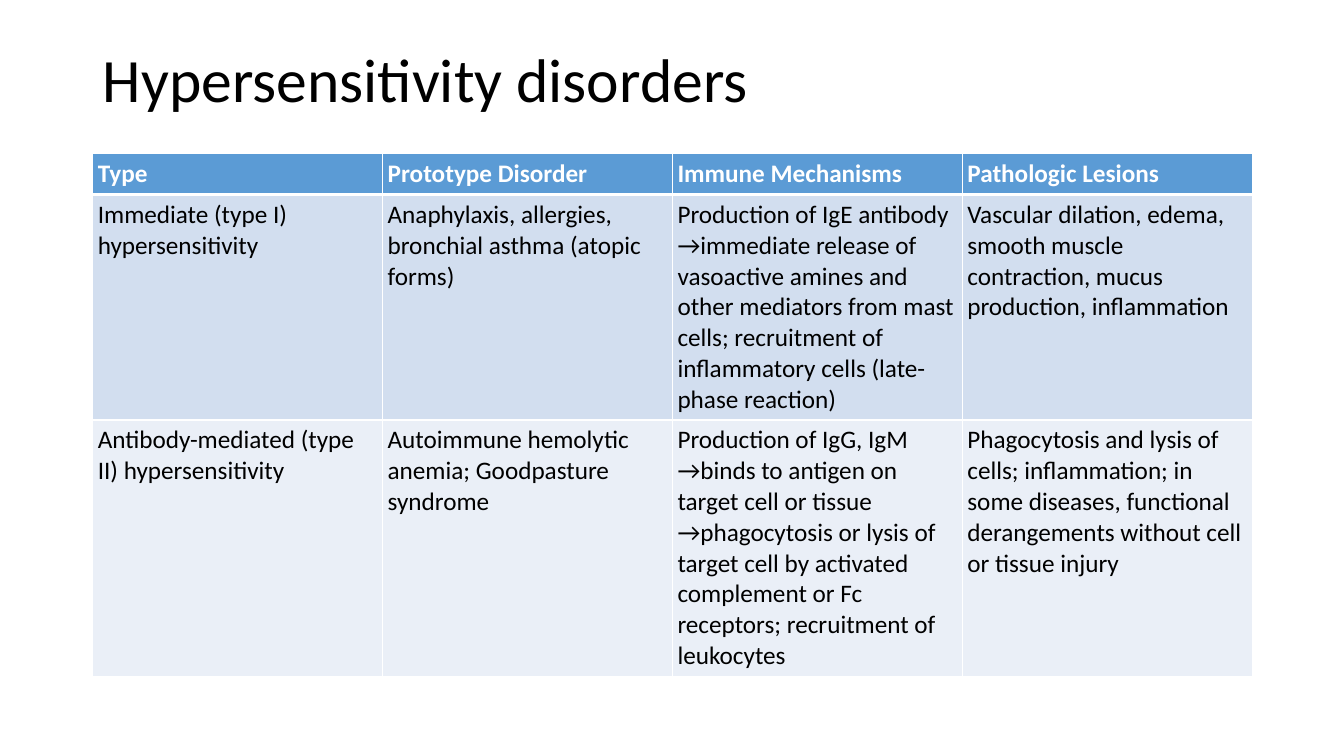
from lxml import etree
from pptx import Presentation
from pptx.dml.color import RGBColor
from pptx.enum.text import MSO_ANCHOR, MSO_AUTO_SIZE, PP_ALIGN
from pptx.oxml.ns import qn
from pptx.util import Inches, Pt

# Content
TITLE = "Hypersensitivity disorders"
ROWS = [
    ("Type", "Prototype Disorder", "Immune Mechanisms", "Pathologic Lesions"),
    (
        "Immediate (type I) hypersensitivity",
        "Anaphylaxis, allergies, bronchial asthma (atopic forms)",
        "Production of IgE antibody →immediate release of vasoactive amines and "
        "other mediators from mast cells; recruitment of inflammatory cells "
        "(late-phase reaction)",
        "Vascular dilation, edema, smooth muscle contraction, mucus production, "
        "inflammation",
    ),
    (
        "Antibody-mediated (type II) hypersensitivity",
        "Autoimmune hemolytic anemia; Goodpasture syndrome",
        "Production of IgG, IgM →binds to antigen on target cell or tissue "
        "→phagocytosis or lysis of target cell by activated complement or Fc "
        "receptors; recruitment of leukocytes",
        "Phagocytosis and lysis of cells; inflammation; in some diseases, "
        "functional derangements without cell or tissue injury",
    ),
]

# Style
FONT = "Calibri"
BLACK = RGBColor(0x00, 0x00, 0x00)
WHITE = RGBColor(0xFF, 0xFF, 0xFF)
ROW_FILLS = [
    RGBColor(0x5B, 0x9B, 0xD5),
    RGBColor(0xD2, 0xDE, 0xEF),
    RGBColor(0xEA, 0xEF, 0xF7),
]
TOP, MIDDLE, BOTTOM = MSO_ANCHOR.TOP, MSO_ANCHOR.MIDDLE, MSO_ANCHOR.BOTTOM
NO_AUTOFIT = MSO_AUTO_SIZE.NONE
LEFT_ALIGN = PP_ALIGN.LEFT

# Layout, in inches
LEFT, WIDTH = 0.92, 11.5
TITLE_TOP, TITLE_HEIGHT = 0.4, 0.84
TABLE_TOP = 1.52
ROW_HEIGHTS = [0.41, 2.23, 2.53]
CELL_MARGIN = 0.05
TITLE_ONLY = 5


def format_text(paragraph, size, color, bold=False):
    paragraph.alignment = LEFT_ALIGN
    for span in paragraph.runs:
        span.font.name = FONT
        span.font.size = Pt(size)
        span.font.bold = bold
        span.font.color.rgb = color


def add_borders(cell, widths):
    properties = cell._tc.get_or_add_tcPr()
    for side, width in widths.items():
        line = etree.SubElement(properties, qn(f"a:ln{side}"), w=str(Pt(width)))
        fill = etree.SubElement(line, qn("a:solidFill"))
        etree.SubElement(fill, qn("a:srgbClr"), val=str(WHITE))


def fill_cell(cell, text, row):
    header = row == 0
    add_borders(cell, {"L": 1, "R": 1, "T": 3 if row == 1 else 1, "B": 3 if header else 1})
    cell.fill.solid()
    cell.fill.fore_color.rgb = ROW_FILLS[row]
    cell.margin_left = cell.margin_right = Inches(CELL_MARGIN)
    cell.margin_top = cell.margin_bottom = Inches(CELL_MARGIN)
    cell.vertical_anchor = BOTTOM if header else TOP
    cell.text_frame.text = text
    format_text(cell.text_frame.paragraphs[0], 18, WHITE if header else BLACK, header)


def main():
    deck = Presentation()
    deck.slide_width, deck.slide_height = Inches(13.33), Inches(7.5)
    page = deck.slides.add_slide(deck.slide_layouts[TITLE_ONLY])

    # Title
    title = page.shapes.title
    title.left, title.top = Inches(LEFT), Inches(TITLE_TOP)
    title.width, title.height = Inches(WIDTH), Inches(TITLE_HEIGHT)
    frame = title.text_frame
    frame.text = TITLE
    frame.auto_size = NO_AUTOFIT
    frame.vertical_anchor = MIDDLE
    frame.paragraphs[0].line_spacing = 0.9
    format_text(frame.paragraphs[0], 44, BLACK)

    # Table
    table = page.shapes.add_table(
        len(ROWS), len(ROWS[0]), Inches(LEFT), Inches(TABLE_TOP),
        Inches(WIDTH), Inches(sum(ROW_HEIGHTS)),
    ).table
    for column in table.columns:
        column.width = Inches(WIDTH / len(ROWS[0]))
    for row, texts in enumerate(ROWS):
        table.rows[row].height = Inches(ROW_HEIGHTS[row])
        for column, text in enumerate(texts):
            fill_cell(table.cell(row, column), text, row)

    deck.save("out.pptx")


if __name__ == "__main__":
    main()
